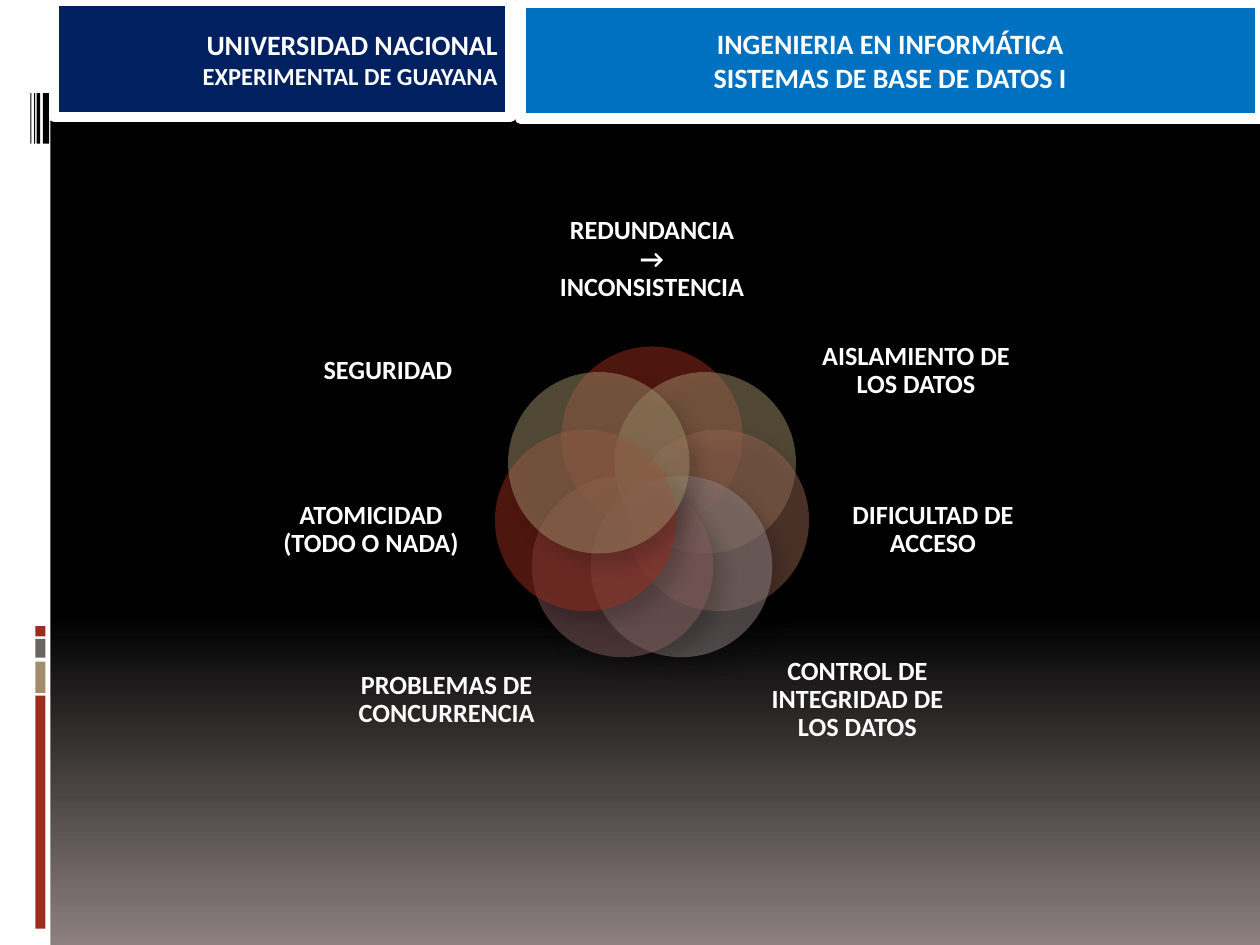
import math

import lxml.etree
import pptx
import pptx.util
from pptx.dml.color import RGBColor
from pptx.enum.shapes import MSO_SHAPE
from pptx.enum.text import MSO_ANCHOR, PP_ALIGN
from pptx.oxml.ns import qn

# Grid of 100 columns by 75 rows
COLUMNS, ROWS = 100, 75
CELL = pptx.util.Inches(0.1)

WHITE = RGBColor(0xFF, 0xFF, 0xFF)
BLACK = RGBColor(0x00, 0x00, 0x00)
MAUVE = RGBColor(0x8C, 0x80, 0x80)
RED = RGBColor(0x9B, 0x2D, 0x1F)
SAND = RGBColor(0xA2, 0x8E, 0x6A)
SLATE = RGBColor(0x69, 0x64, 0x64)
BROWN = RGBColor(0x95, 0x62, 0x51)
GREY = RGBColor(0x91, 0x84, 0x85)
ROSE = RGBColor(0x85, 0x5D, 0x5D)
NAVY = RGBColor(0x00, 0x20, 0x60)
BLUE = RGBColor(0x00, 0x70, 0xC0)

# Ring of circles, in grid cells
CENTRE_X, CENTRE_Y = 51.75, 40.1
RING_RADIUS = 5.4
DIAMETER = 14.4

# Side bars: column, row, width, height, colour
SIDE_BARS = [
    (0, 0, 4, ROWS, WHITE),
    (2.8, 55.2, 0.8, 18.5, RED),
    (2.8, 52.5, 0.8, 2.5, SAND),
    (2.8, 50.7, 0.8, 1.5, SLATE),
    (2.8, 49.7, 0.8, 0.8, RED),
    (3.4, 7.4, 0.5, 4, BLACK),
    (2.9, 7.4, 0.3, 4, BLACK),
    (2.7, 7.4, 0.1, 4, BLACK),
    (2.4, 7.4, 0.1, 4, BLACK),
]

# Problems, clockwise: text, circle colour, label offset from the axis,
# label middle row, width, height
PROBLEMS = [
    ("REDUNDANCIA\v→\vINCONSISTENCIA", RED, 0, 20.6, 16.5, 8.8),
    ("AISLAMIENTO DE LOS DATOS", SAND, 20.95, 29.45, 15.6, 9.7),
    ("DIFICULTAD DE ACCESO", BROWN, 22.3, 42.05, 15.3, 10.3),
    ("CONTROL DE INTEGRIDAD DE LOS DATOS", GREY, 16.3, 55.55, 16.5, 9.5),
    ("PROBLEMAS DE CONCURRENCIA", ROSE, -16.3, 55.55, 16.5, 9.5),
    ("ATOMICIDAD (TODO O NADA)", RED, -22.3, 42.05, 15.3, 10.3),
    ("SEGURIDAD", SAND, -20.95, 29.45, 15.6, 9.7),
]


def cells(*counts):
    return [round(count * CELL) for count in counts]


def add_block(page, kind, area, color):
    """Add a filled shape with neither outline nor shadow."""
    block = page.shapes.add_shape(kind, *cells(*area))
    block.shadow.inherit = False
    block.fill.solid()
    block.fill.fore_color.rgb = color
    block.line.fill.background()
    return block


def write_text(shape, lines, sizes, align=PP_ALIGN.CENTER, spacing=None):
    """Write one bold white paragraph for each line."""
    frame = shape.text_frame
    frame.word_wrap = True
    frame.vertical_anchor = MSO_ANCHOR.MIDDLE
    for index, (line, size) in enumerate(zip(lines, sizes)):
        para = frame.add_paragraph() if index else frame.paragraphs[0]
        para.text = line
        para.alignment = align
        para.line_spacing = spacing
        for span in para.runs:
            span.font.name = "Calibri"
            span.font.size = pptx.util.Pt(size)
            span.font.bold = True
            span.font.color.rgb = WHITE


def add_color_alpha(color_element, percent):
    alpha = lxml.etree.SubElement(color_element, qn("a:alpha"))
    alpha.set("val", str(percent * 1000))


def add_circle(page, index, color):
    """Add a half-transparent circle with a soft shadow to the ring."""
    angle = 2 * math.pi * index / len(PROBLEMS)
    left = CENTRE_X + RING_RADIUS * math.sin(angle) - DIAMETER / 2
    top = CENTRE_Y - RING_RADIUS * math.cos(angle) - DIAMETER / 2
    circle = add_block(page, MSO_SHAPE.OVAL, (left, top, DIAMETER, DIAMETER), color)
    properties = circle._element.spPr
    add_color_alpha(properties.find(qn("a:solidFill"))[0], 50)
    shadow = lxml.etree.SubElement(properties.find(qn("a:effectLst")), qn("a:outerShdw"))
    shadow.set("blurRad", str(pptx.util.Pt(10.2)))
    shadow.set("dist", str(pptx.util.Pt(8)))
    shadow.set("dir", str(45 * 60000))
    shade = lxml.etree.SubElement(shadow, qn("a:srgbClr"))
    shade.set("val", str(BLACK))
    add_color_alpha(shade, 35)


def add_label(page, text, offset, middle, width, height):
    left = CENTRE_X + offset - width / 2
    box = page.shapes.add_textbox(*cells(left, middle - height / 2, width, height))
    frame = box.text_frame
    frame.margin_left = frame.margin_right = 0
    frame.margin_top = frame.margin_bottom = 0
    write_text(box, [text], [15], spacing=0.9)


def add_header(page, area, color, lines, sizes, align):
    header = add_block(page, MSO_SHAPE.RECTANGLE, area, color)
    header.line.color.rgb = WHITE
    header.line.width = pptx.util.Pt(6)
    write_text(header, lines, sizes, align)


def paint_background(page):
    fill = page.background.fill
    fill.gradient()
    fill.gradient_angle = 270
    for stop, position, color in zip(fill.gradient_stops, (0.65, 1), (BLACK, MAUVE)):
        stop.position = position
        stop.color.rgb = color


def main():
    deck = pptx.Presentation()
    deck.slide_width, deck.slide_height = cells(COLUMNS, ROWS)
    page = deck.slides.add_slide(deck.slide_layouts[6])
    paint_background(page)

    # Side decoration
    for *area, color in SIDE_BARS:
        add_block(page, MSO_SHAPE.RECTANGLE, area, color)

    # Ring of problems
    for index, (text, color, *place) in enumerate(PROBLEMS):
        add_circle(page, index, color)
        add_label(page, text, *place)

    # Headers
    add_header(page, (4.3, 0.1, 36.2, 9.2), NAVY,
               ["UNIVERSIDAD NACIONAL", "EXPERIMENTAL DE GUAYANA"],
               [16, 14], PP_ALIGN.RIGHT)
    add_header(page, (41.3, 0.2, 58.7, 9.2), BLUE,
               ["INGENIERIA EN INFORMÁTICA", "SISTEMAS DE BASE DE DATOS I"],
               [16, 16], PP_ALIGN.CENTER)

    deck.save("out.pptx")


if __name__ == "__main__":
    main()
